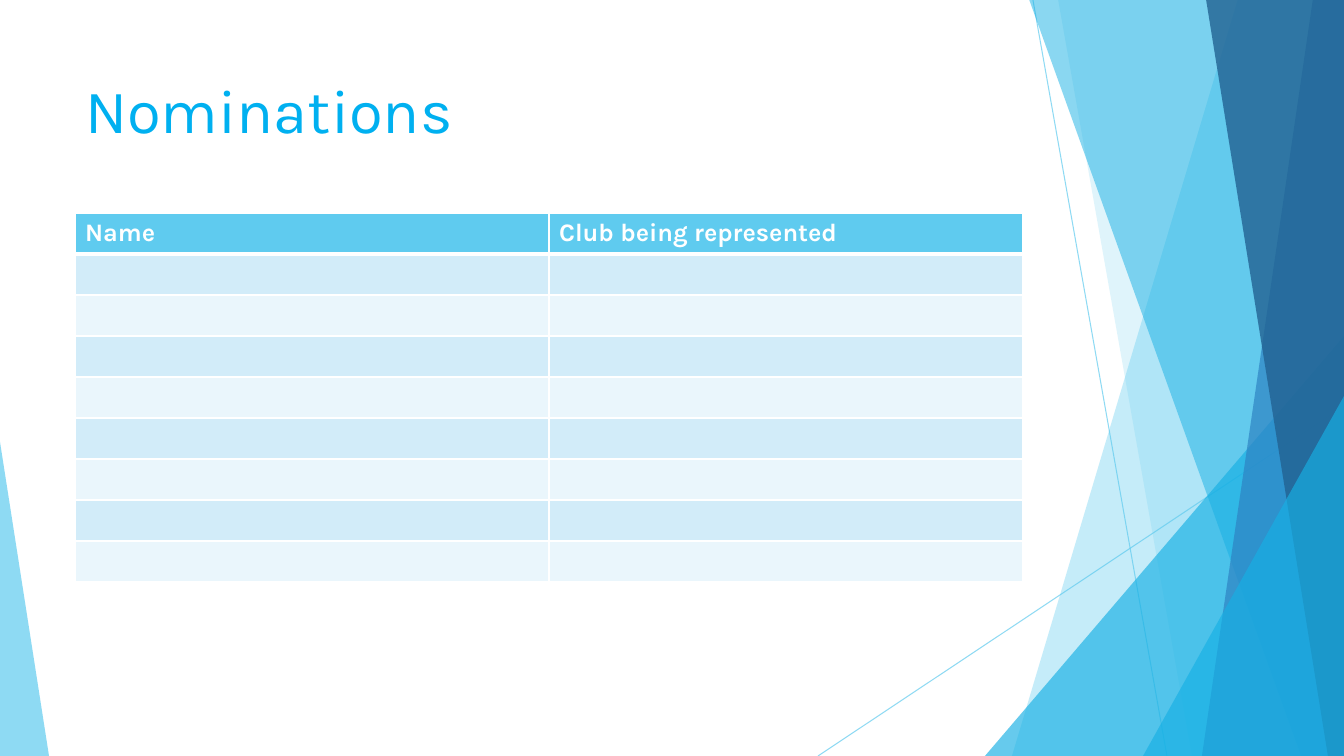
from lxml import etree
from pptx import Presentation
from pptx import util as u
from pptx.dml.color import RGBColor
from pptx.enum import shapes, text
from pptx.oxml.ns import qn

SCALE = 12192000 / 1344
SKY = RGBColor(0x5F, 0xCB, 0xEF)
AZURE = RGBColor(0x17, 0xB0, 0xE4)
BLUE = RGBColor(0x2E, 0x83, 0xC3)
NAVY = RGBColor(0x22, 0x62, 0x92)
TITLE = RGBColor(0x00, 0xB0, 0xF0)
WHITE = RGBColor(0xFF, 0xFF, 0xFF)
BAND_DARK = RGBColor(0xD2, 0xEC, 0xF9)
BAND_LIGHT = RGBColor(0xEA, 0xF6, 0xFC)


def px(n):
    return u.Emu(round(n * SCALE))


class Deck:
    font = "Karla"

    def __init__(self, w, h):
        self.prs = Presentation()
        self.prs.slide_width, self.prs.slide_height = px(w), px(h)
        self.s = self.prs.slides.add_slide(self.prs.slide_layouts[5])

    def fade(self, sp, alpha):
        color = next(sp.element.iter(qn("a:srgbClr")))
        etree.SubElement(color, qn("a:alpha"), val=str(alpha * 1000))

    def paint(self, sp, color, alpha):
        sp.shadow.inherit = False
        sp.fill.solid()
        sp.fill.fore_color.rgb = color
        sp.line.fill.background()
        self.fade(sp, alpha)

    def line(self, x1, y1, x2, y2, color, alpha):
        c = self.s.shapes.add_connector(
            shapes.MSO_CONNECTOR.STRAIGHT, px(x1), px(y1), px(x2), px(y2))
        c.line.color.rgb = color
        c.line.width = u.Pt(0.75)
        etree.SubElement(c.element.spPr, qn("a:effectLst"))
        self.fade(c, alpha)

    def facet(self, top, bottom, color, alpha):
        fb = self.s.shapes.build_freeform(px(top), px(-1), scale=1.0)
        fb.add_line_segments(
            [(px(1344), px(-1)), (px(1344), px(756)), (px(bottom), px(756))], close=True)
        self.paint(fb.convert_to_shape(), color, alpha)

    def triangle(self, x, y, w, h, apex, color, alpha):
        sp = self.s.shapes.add_shape(
            shapes.MSO_SHAPE.ISOSCELES_TRIANGLE, px(x), px(y), px(w), px(h))
        sp.adjustments[0] = apex
        self.paint(sp, color, alpha)

    def run(self, p, words, size, color, bold=False):
        r = p.add_run()
        r.text = words
        r.font.name, r.font.size, r.font.bold = self.font, u.Pt(size), bold
        r.font.color.rgb = color

    def title(self, words, x, y, w, h):
        sp = self.s.shapes.title
        sp.left, sp.top, sp.width, sp.height = px(x), px(y), px(w), px(h)
        sp.element.getparent().append(sp.element)
        tf = sp.text_frame
        tf.word_wrap = True
        tf.auto_size = text.MSO_AUTO_SIZE.NONE
        tf.vertical_anchor = text.MSO_ANCHOR.TOP
        p = tf.paragraphs[0]
        p.alignment = text.PP_ALIGN.LEFT
        self.run(p, words, 44, TITLE)

    def border(self, cell, side, width):
        ln = etree.SubElement(
            cell._tc.get_or_add_tcPr(), qn(f"a:ln{side}"), w=str(u.Pt(width)))
        fill = etree.SubElement(ln, qn("a:solidFill"))
        etree.SubElement(fill, qn("a:srgbClr"), val=str(WHITE))

    def table(self, headers, rows, x, y, col_w, row_h):
        cols = len(headers)
        t = self.s.shapes.add_table(
            rows, cols, px(x), px(y), px(col_w * cols), px(row_h * rows)).table
        t.horz_banding = False
        for i in range(rows):
            t.rows[i].height = px(row_h)
            fill = SKY if i == 0 else BAND_DARK if i % 2 else BAND_LIGHT
            for j in range(cols):
                cell = t.cell(i, j)
                for side in "LRTB":
                    heavy = (i, side) in ((0, "B"), (1, "T"))
                    self.border(cell, side, 3 if heavy else 1)
                cell.fill.solid()
                cell.fill.fore_color.rgb = fill
        for j, words in enumerate(headers):
            t.columns[j].width = px(col_w)
            self.run(t.cell(0, j).text_frame.paragraphs[0], words, 18, WHITE, True)


def main():
    d = Deck(1344, 756)
    d.line(1033, 0, 1167, 756, SKY, 70)
    d.line(1344, 406, 818, 756, SKY, 70)
    d.facet(1238, 1012, SKY, 36)
    d.facet(1058, 1192, SKY, 20)
    d.triangle(985, 336, 359, 420, 1, AZURE, 66)
    d.facet(1029, 1301, AZURE, 50)
    d.facet(1313, 1202, BLUE, 70)
    d.facet(1206, 1328, NAVY, 80)
    d.triangle(1143, 396, 201, 360, 1, AZURE, 66)
    d.triangle(0, 442, 49, 314, 0, SKY, 70)
    d.title("Nominations", 75, 67, 948, 146)
    d.table(["Name", "Club being represented"], 9, 75, 213, 474, 41)
    d.prs.save("out.pptx")


if __name__ == "__main__":
    main()
